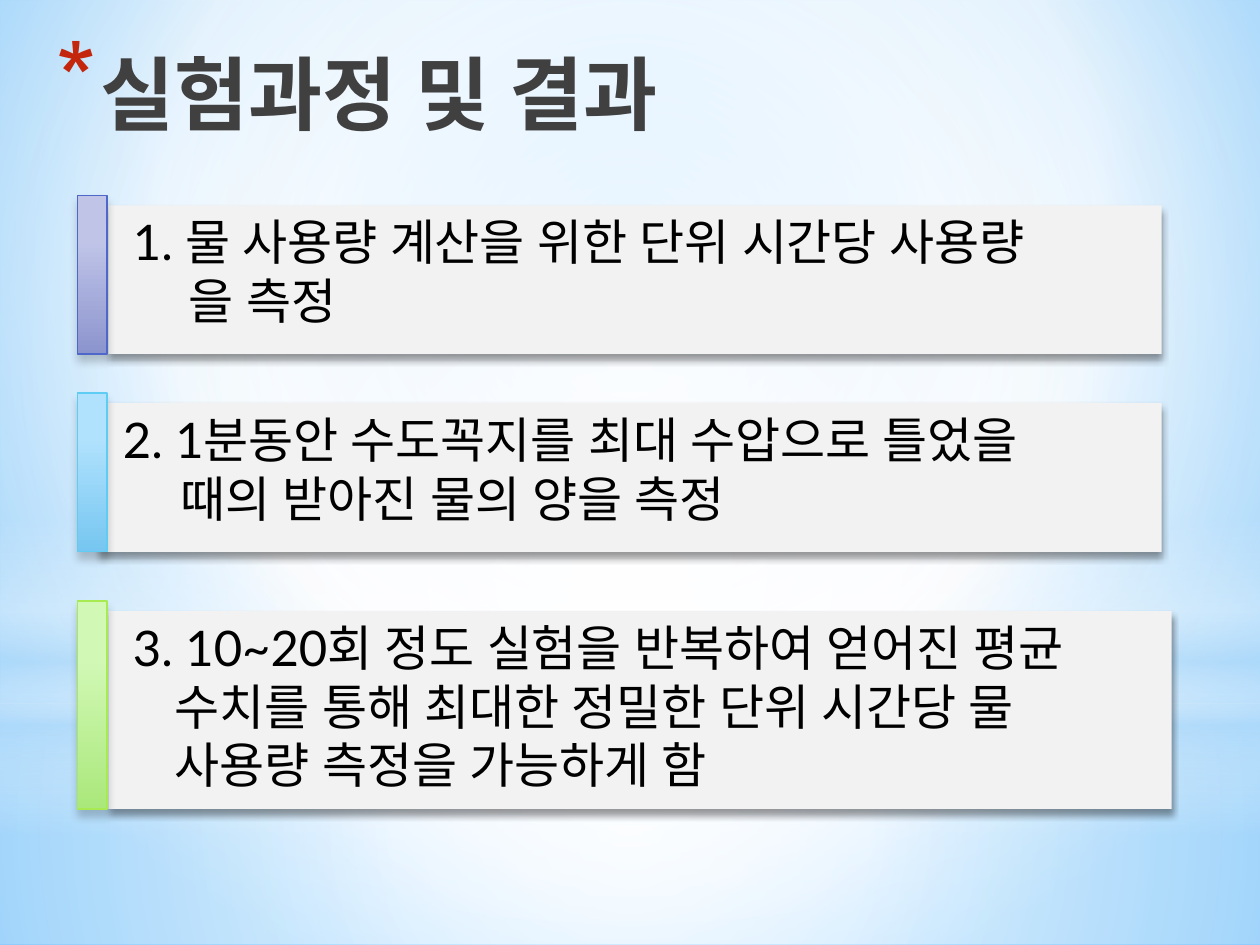
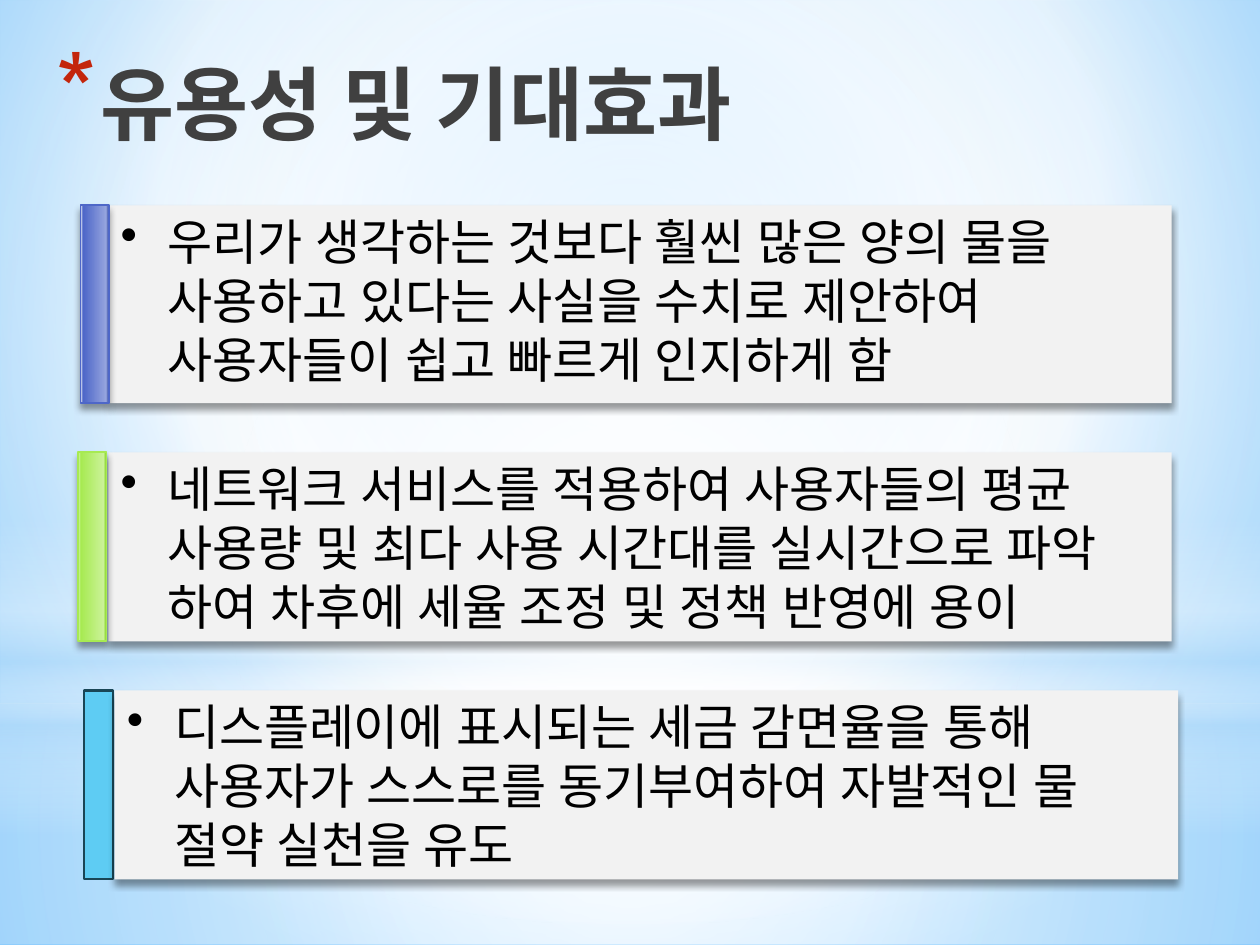
from lxml.etree import SubElement
from pptx import Presentation
from pptx.dml.color import RGBColor
from pptx.enum.shapes import MSO_SHAPE as Preset
from pptx.enum.text import MSO_ANCHOR as Anchor, MSO_AUTO_SIZE as AutoSize, PP_ALIGN as Align
from pptx.oxml import parse_xml
from pptx.oxml.ns import nsdecls, qn
from pptx.util import Pt

LATIN, HANGUL = "Lato", "Noto Sans CJK KR"
INK, PANEL, BULLET_RED = "000000", "F2F2F2", "C3260C"
WHITE, SKY = "FFFFFF", "B4DCFA"
CENTRE = (50, 50, 50, 50)
BACKDROP = [(0, "9ED5FF"), (60, WHITE), (100, "5BB9FF")]
TITLE_STOPS = [(0, INK), (40, "404040"), (100, "212745", 65)]
SCENERY = [
    (Preset.RECTANGLE, (0, 402, 720, 138), [(0, WHITE, 91), (37, WHITE, 76), (100, SKY, 79)], CENTRE),
    (Preset.RECTANGLE, (0, 0, 720, 402), [(0, WHITE, 89), (48, WHITE, 62), (100, SKY, 79)], CENTRE),
    (Preset.RECTANGLE, (0, 297, 720, 180),
     [(0, WHITE, 0), (29, WHITE, 30), (45, SKY, 40), (55, WHITE, 26), (65, SKY, 60), (100, WHITE, 0)], None),
    (Preset.OVAL, (0, 126, 720, 402), [(0, WHITE), (56, WHITE, 0)], CENTRE),
]
DEEP_SHADOW = (40, 4, 3)
SOFT_SHADOW = (20, 5, 4)


def rgb(value):
    return RGBColor.from_string(value)


def add_colour(parent, value, opacity=100):
    colour = SubElement(parent, qn("a:srgbClr"), val=value)
    if opacity < 100:
        SubElement(colour, qn("a:alpha"), val=str(opacity * 1000))


def gradient(stops, angle=90, focus=None):
    fill = parse_xml(f'<a:gradFill {nsdecls("a")} rotWithShape="1"><a:gsLst/></a:gradFill>')
    for position, *colour in stops:
        add_colour(SubElement(fill[0], qn("a:gs"), pos=str(position * 1000)), *colour)
    if focus:
        circle = SubElement(fill, qn("a:path"), path="circle")
        edges = {side: str(share * 1000) for side, share in zip("ltrb", focus)}
        SubElement(circle, qn("a:fillToRect"), edges)
    else:
        SubElement(fill, qn("a:lin"), ang=str(angle * 60000), scaled="0")
    return fill


def replace_solid(parent, fill):
    parent.replace(parent.find(qn("a:solidFill")), fill)


def add_block(page, preset, place, fill, line=None, shadow=None):
    block = page.shapes.add_shape(preset, *map(Pt, place))
    block.fill.solid()
    if isinstance(fill, str):
        block.fill.fore_color.rgb = rgb(fill)
    else:
        replace_solid(block.element.spPr, fill)
    if line:
        block.line.color.rgb = rgb(line[0])
        block.line.width = Pt(line[1])
    else:
        block.line.fill.background()
    block.shadow.inherit = False
    if shadow:
        opacity, blur, distance = shadow
        effects = block.element.spPr.find(qn("a:effectLst"))
        outer = SubElement(effects, qn("a:outerShdw"), blurRad=str(Pt(blur)), dist=str(Pt(distance)),
                           dir="5400000", rotWithShape="0")
        add_colour(outer, INK, opacity)
    return block


def format_span(span, size, font=LATIN, bold=False):
    span.font.size = Pt(size)
    span.font.bold = bold
    span.font.name = font
    span.font.color.rgb = rgb(INK)
    properties = span.font._element
    properties.set("lang", "ko-KR")
    properties.find(qn("a:latin")).addnext(parse_xml(f'<a:ea {nsdecls("a")} typeface="{LATIN}"/>'))


def set_indent(para, margin, hanging=0):
    properties = para._p.get_or_add_pPr()
    properties.set("marL", str(Pt(margin)))
    properties.set("indent", str(Pt(-hanging)))
    return properties


def add_bullet(para, symbol, indent, colour=None, percent=None):
    properties = set_indent(para, indent, indent)
    if colour:
        add_colour(SubElement(properties, qn("a:buClr")), colour)
    if percent:
        SubElement(properties, qn("a:buSzPct"), val=str(percent * 1000))
    SubElement(properties, qn("a:buChar"), char=symbol)


def add_page(deck, title, top):
    page = deck.slides.add_slide(deck.slide_layouts[5])
    box = page.shapes.title
    box.left, box.top, box.width, box.height = map(Pt, (25.2, top, 512.64, 90))
    frame = box.text_frame
    frame.text = title
    frame.word_wrap = True
    frame.auto_size = AutoSize.NONE
    frame.vertical_anchor = Anchor.TOP
    para = frame.paragraphs[0]
    para.alignment = Align.LEFT
    add_bullet(para, "*", 25.2, BULLET_RED, 128)
    span = para.runs[0]
    format_span(span, 46, bold=True)
    replace_solid(span.font._element, gradient(TITLE_STOPS))
    return page


def add_panel(page, place, lines, font=LATIN):
    panel = add_block(page, Preset.RECTANGLE, place, PANEL, shadow=DEEP_SHADOW)
    frame = panel.text_frame
    frame.text = "\n".join(lines)
    frame.word_wrap = True
    frame.vertical_anchor = Anchor.TOP
    for para in frame.paragraphs:
        para.alignment = Align.LEFT
        format_span(para.runs[0], 28, font)
    return frame.paragraphs


def add_step(page, place, lines, indent):
    first, *rest = add_panel(page, place, lines)
    set_indent(first, 7)
    for para in rest:
        set_indent(para, indent)


def add_benefit(page, place, text):
    add_bullet(add_panel(page, place, [text], HANGUL)[0], "•", 27)


def add_tab(page, place, fill, line, shadow=None):
    add_block(page, Preset.RECTANGLE, place, fill, line, shadow)


def dress_layout(deck, page):
    master = deck.slide_master
    master.background.fill.solid()
    replace_solid(master.element.find(".//" + qn("p:bgPr")), gradient(BACKDROP, focus=(20, 10, 20, 60)))
    tree = page.slide_layout.shapes.element
    for index, (preset, place, stops, focus) in enumerate(SCENERY, 2):
        block = add_block(page, preset, place, gradient(stops, focus=focus))
        tree.insert(index, block.element)


def build_process(page):
    steps = [
        (61.92, 117.36, 601.92, 84.96, 39, "C0C5E8", "8C94CE", "4E67C8",
         ["1. 물 사용량 계산을 위한 단위 시간당 사용량", "을 측정"]),
        (56.16, 230.4, 607.68, 84.96, 40, "B1E2FD", "76C6F1", "5ECCF3",
         ["2. 1분동안 수도꼭지를 최대 수압으로 틀었을", "때의 받아진 물의 양을 측정"]),
        (61.92, 349.2, 607.68, 113.04, 31, "D1F8B5", "AAE87B", "A7EA52",
         ["3. 10~20회 정도 실험을 반복하여 얻어진 평균", "수치를 통해 최대한 정밀한 단위 시간당 물",
          "사용량 측정을 가능하게 함"]),
    ]
    for left, top, width, height, indent, light, dark, edge, lines in steps:
        add_step(page, (left, top, width, height), lines, indent)
        add_tab(page, (44.4, top - 5.76, 16.8, height + 5.76),
                gradient([(28, light), (100, dark)]), (edge, 0.75), SOFT_SHADOW)


def build_benefits(page):
    benefits = [
        (46.08, 117.36, 113.04, ("31489F", "95A4DE", "4E67C8", "B8C2E9"),
         "우리가 생각하는 것보다 훨씬 많은 양의 물을 사용하고 있다는 사실을 수치로 제안하여 "
         "사용자들이 쉽고 빠르게 인지하게 함"),
        (44.64, 258.48, 108, ("81D31A", "CAF297", "A7EA52", "DCF7BA"),
         "네트워크 서비스를 적용하여 사용자들의 평균 사용량 및 최다 사용 시간대를 실시간으로 파악 "
         "하여 차후에 세율 조정 및 정책 반영에 용이"),
    ]
    for left, top, height, colours, text in benefits:
        add_benefit(page, (61.92, top, 607.68, height), text)
        add_tab(page, (left, top, 16.2, height), gradient(list(zip((0, 10, 90, 100), colours)), 180),
                (colours[2], 1), DEEP_SHADOW)
    add_tab(page, (48.24, 394.56, 16.56, 108), "5ECCF3", ("194656", 1.25))
    add_benefit(page, (65.52, 394.56, 607.68, 108),
                "디스플레이에 표시되는 세금 감면율을 통해 사용자가 스스로를 동기부여하여 자발적인 물 "
                "절약 실천을 유도")


def main():
    deck = Presentation()
    deck.slide_width, deck.slide_height = Pt(720), Pt(540)
    process = add_page(deck, "실험과정 및 결과", 21.6)
    dress_layout(deck, process)
    build_process(process)
    build_benefits(add_page(deck, "유용성 및 기대효과", 27.36))
    deck.save("out.pptx")


if __name__ == "__main__":
    main()
